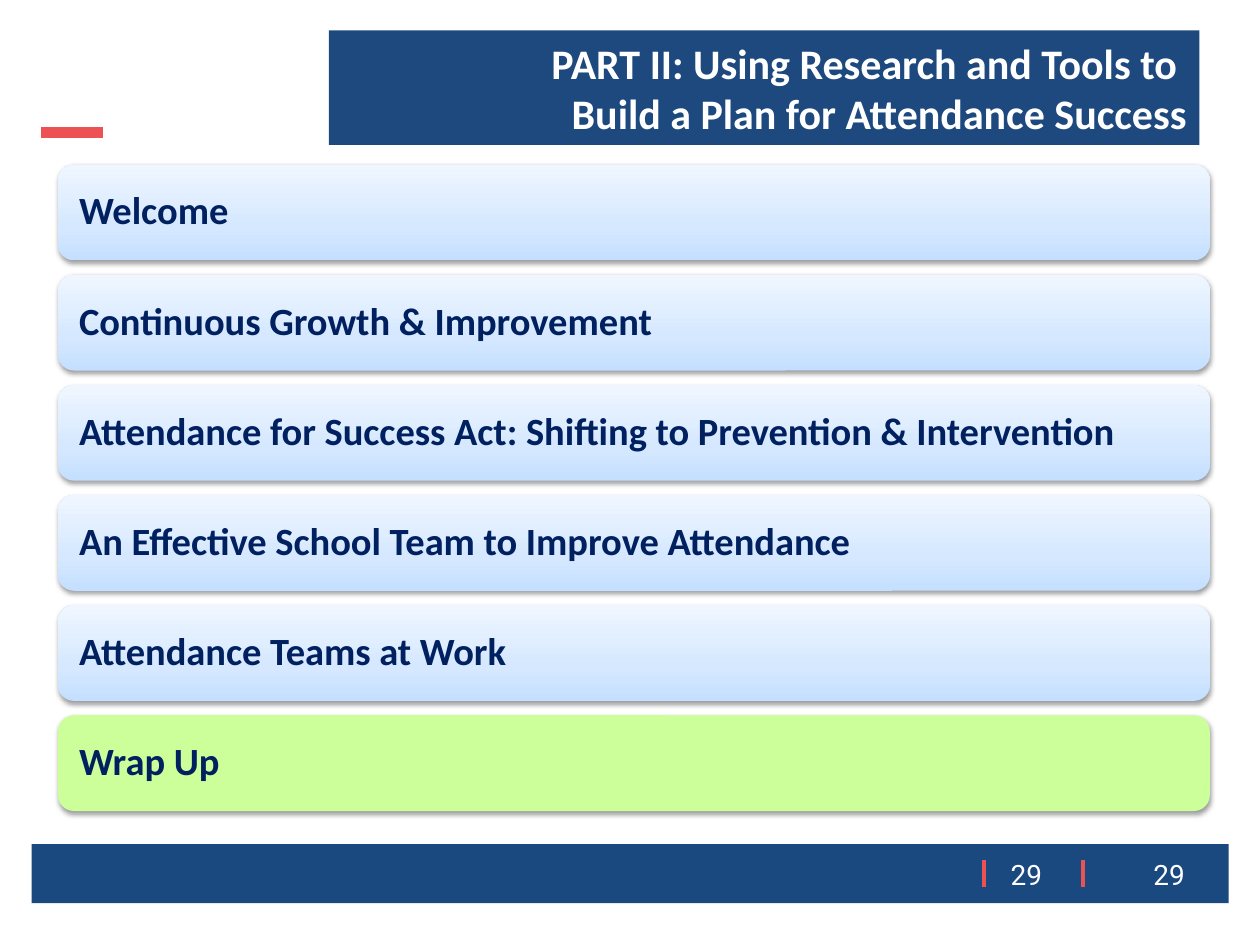
from lxml import etree
from pptx import Presentation
from pptx import util as u
from pptx.dml.color import RGBColor
from pptx.enum import shapes, text
from pptx.oxml import parse_xml
from pptx.oxml.ns import nsdecls, qn

NAVY = RGBColor(0x1E, 0x49, 0x7F)
BLUE = RGBColor(0x1A, 0x49, 0x7F)
INK = RGBColor(0x00, 0x20, 0x60)
RED = RGBColor(0xEC, 0x51, 0x53)
LIME = RGBColor(0xCC, 0xFF, 0x99)
WHITE = RGBColor(0xFF, 0xFF, 0xFF)
SKY = ((0, RGBColor(0xC4, 0xDF, 0xFF)),
       (35, RGBColor(0xD5, 0xE8, 0xFF)),
       (100, RGBColor(0xEF, 0xF6, 0xFF)))

TOPICS = (
    "Welcome",
    "Continuous Growth & Improvement",
    "Attendance for Success Act: Shifting to Prevention & Intervention",
    "An Effective School Team to Improve Attendance",
    "Attendance Teams at Work",
    "Wrap Up",
)


class Deck:
    head = "Calibri"
    foot = "Roboto"

    def __init__(self):
        self.prs = Presentation()
        self.prs.slide_width = u.Cm(25.4)
        self.prs.slide_height = u.Cm(19.05)
        self.slide = self.prs.slides.add_slide(self.prs.slide_layouts[5])

    def style(self, para, words, face, size, color, bold, align):
        para.text = words
        para.alignment = align
        font = para.font
        font.name, font.size, font.bold = face, u.Pt(size), bold
        font.color.rgb = color

    def title(self, lines, x, y, w, h):
        box = self.slide.shapes.title
        box.left, box.top, box.width, box.height = map(u.Cm, (x, y, w, h))
        box.fill.solid()
        box.fill.fore_color.rgb = NAVY
        frame = box.text_frame
        frame.auto_size = text.MSO_AUTO_SIZE.NONE
        frame.vertical_anchor = text.MSO_ANCHOR.MIDDLE
        for i, line in enumerate(lines):
            para = frame.add_paragraph() if i else frame.paragraphs[0]
            self.style(para, line, self.head, 24, WHITE, True,
                       text.PP_ALIGN.RIGHT)

    def block(self, kind, x, y, w, h, color=None):
        box = self.slide.shapes.add_shape(kind, *map(u.Cm, (x, y, w, h)))
        box.shadow.inherit = False
        box.line.fill.background()
        if color is not None:
            box.fill.solid()
            box.fill.fore_color.rgb = color
        return box

    def bar(self, words, x, y, w, h, color=None):
        box = self.block(shapes.MSO_SHAPE.ROUNDED_RECTANGLE,
                         x, y, w, h, color)
        if color is None:
            self.blend(box)
        self.shade(box)
        frame = box.text_frame
        frame.word_wrap = True
        frame.vertical_anchor = text.MSO_ANCHOR.MIDDLE
        frame.margin_left = frame.margin_right = u.Cm(0.33)
        para = frame.paragraphs[0]
        para.line_spacing = 0.9
        self.style(para, words, self.head, 22, INK, True, text.PP_ALIGN.LEFT)

    def blend(self, box):
        stops = "".join(
            f'<a:gs pos="{pos * 1000}"><a:srgbClr val="{tint}"/></a:gs>'
            for pos, tint in SKY)
        fill = parse_xml(
            f'<a:gradFill {nsdecls("a")} rotWithShape="1"><a:gsLst>{stops}'
            '</a:gsLst><a:lin ang="16200000" scaled="0"/></a:gradFill>')
        box._element.spPr.find(qn("a:prstGeom")).addnext(fill)

    def shade(self, box):
        cast = parse_xml(
            f'<a:outerShdw {nsdecls("a")} blurRad="40000" dist="20000" '
            'dir="5400000" rotWithShape="0"><a:srgbClr val="000000">'
            '<a:alpha val="38000"/></a:srgbClr></a:outerShdw>')
        box._element.spPr.find(qn("a:effectLst")).append(cast)

    def rule(self, x1, y1, x2, y2, width):
        line = self.slide.shapes.add_connector(
            shapes.MSO_CONNECTOR.STRAIGHT, *map(u.Cm, (x1, y1, x2, y2)))
        line.line.color.rgb = RED
        line.line.width = u.Pt(width)
        etree.SubElement(line._element.spPr, qn("a:effectLst"))

    def label(self, words, x, y, w, h):
        box = self.slide.shapes.add_textbox(*map(u.Cm, (x, y, w, h)))
        frame = box.text_frame
        frame.word_wrap = True
        frame.vertical_anchor = text.MSO_ANCHOR.MIDDLE
        self.style(frame.paragraphs[0], words, self.foot, 16, WHITE, False,
                   text.PP_ALIGN.CENTER)

    def save(self):
        self.prs.save("out.pptx")


def main():
    deck = Deck()
    deck.rule(0.83, 2.67, 2.08, 2.67, 6)
    deck.block(shapes.MSO_SHAPE.RECTANGLE, 0.64, 17.02, 24.13, 1.19, BLUE)
    for x in (19.84, 21.84):
        deck.rule(x, 17.33, x, 17.88, 2.25)
    for x in (19.89, 22.77):
        deck.label("29", x, 17.15, 1.6, 0.94)
    deck.title(("PART II: Using Research and Tools to ",
                "Build a Plan for Attendance Success"),
               6.63, 0.61, 17.55, 2.31)
    last = len(TOPICS) - 1
    for i, topic in enumerate(TOPICS):
        deck.bar(topic, 1.17, 3.32 + 2.22 * i, 23.22, 1.93,
                 LIME if i == last else None)
    deck.save()


if __name__ == "__main__":
    main()
